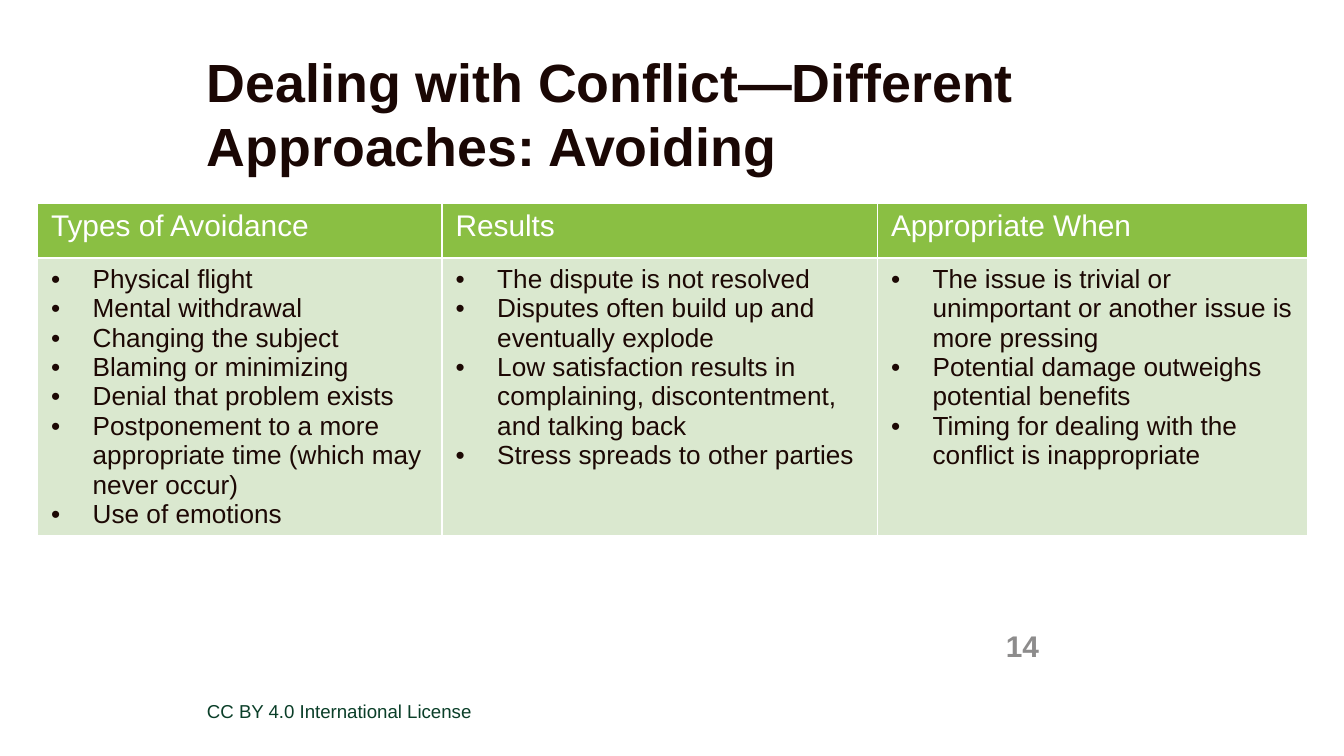
from dataclasses import dataclass

from lxml import etree
from pptx import Presentation
from pptx.dml.color import RGBColor
from pptx.enum.text import MSO_ANCHOR, MSO_AUTO_SIZE, PP_ALIGN
from pptx.oxml.ns import qn
from pptx.util import Inches, Pt

LEFT, RIGHT = PP_ALIGN.LEFT, PP_ALIGN.RIGHT
TOP, MIDDLE = MSO_ANCHOR.TOP, MSO_ANCHOR.MIDDLE
NO_AUTOFIT = MSO_AUTO_SIZE.NONE
TITLE_ONLY = 5


@dataclass(frozen=True)
class TextStyle:
    size: float
    color: str
    bold: bool = False


@dataclass(frozen=True)
class Theme:
    font: str = "Arial"
    title: TextStyle = TextStyle(28.8, "1A0704", True)
    header: TextStyle = TextStyle(16, "FFFFFF")
    body: TextStyle = TextStyle(14, "1C0804")
    footer: TextStyle = TextStyle(10, "0A3E28")
    number: TextStyle = TextStyle(16, "8D8C8C", True)
    header_fill: str = "8ABF43"
    body_fill: str = "DAE8CF"
    border: str = "FFFFFF"


@dataclass(frozen=True)
class Column:
    heading: str
    width: float
    points: tuple[str, ...]


THEME = Theme()
BULLET_INDENT = Inches(0.31)
HEADER_HEIGHT, BODY_HEIGHT = 0.41, 2.05

COLUMNS = (
    Column("Types of Avoidance", 3.01, (
        "Physical flight",
        "Mental withdrawal",
        "Changing the subject",
        "Blaming or minimizing",
        "Denial that problem exists",
        "Postponement to a more appropriate time (which may never occur)",
        "Use of emotions",
    )),
    Column("Results", 3.24, (
        "The dispute is not resolved",
        "Disputes often build up and eventually explode",
        "Low satisfaction results in complaining, discontentment, and talking back",
        "Stress spreads to other parties",
    )),
    Column("Appropriate When", 3.2, (
        "The issue is trivial or unimportant or another issue is more pressing",
        "Potential damage outweighs potential benefits",
        "Timing for dealing with the conflict is inappropriate",
    )),
)


def style_paragraph(para, style: TextStyle, align=LEFT) -> None:
    para.alignment = align
    para.font.name = THEME.font
    para.font.size = Pt(style.size)
    para.font.bold = style.bold
    para.font.color.rgb = RGBColor.from_string(style.color)


def fill_box(box, text: str, style: TextStyle, align=LEFT, anchor=TOP):
    frame = box.text_frame
    frame.word_wrap = True
    frame.auto_size = NO_AUTOFIT
    frame.vertical_anchor = anchor
    frame.margin_left = frame.margin_right = 0
    frame.margin_top = frame.margin_bottom = 0
    frame.text = text
    style_paragraph(frame.paragraphs[0], style, align)
    return frame


def add_bullet(para) -> None:
    properties = para._p.get_or_add_pPr()
    properties.set("marL", str(BULLET_INDENT))
    properties.set("indent", str(-BULLET_INDENT))
    etree.SubElement(properties, qn("a:buFont"), typeface=THEME.font)
    etree.SubElement(properties, qn("a:buChar"), char="•")


def fill_cell(cell, lines: tuple[str, ...], style: TextStyle, fill: str,
              bulleted: bool = False) -> None:
    cell.text = "\n".join(lines)
    for para in cell.text_frame.paragraphs:
        if bulleted:
            add_bullet(para)
        style_paragraph(para, style)

    # Borders come before the fill in the cell properties
    properties = cell._tc.get_or_add_tcPr()
    for side in ("lnL", "lnR", "lnT", "lnB"):
        line = etree.SubElement(properties, qn(f"a:{side}"), w=str(Pt(1)))
        solid = etree.SubElement(line, qn("a:solidFill"))
        etree.SubElement(solid, qn("a:srgbClr"), val=THEME.border)
    cell.fill.solid()
    cell.fill.fore_color.rgb = RGBColor.from_string(fill)


def add_approach_table(page, columns: tuple[Column, ...]) -> None:
    width = sum(column.width for column in columns)
    table = page.shapes.add_table(
        2, len(columns), Inches(0.28), Inches(1.51),
        Inches(width), Inches(HEADER_HEIGHT + BODY_HEIGHT)).table
    table.rows[0].height = Inches(HEADER_HEIGHT)
    table.rows[1].height = Inches(BODY_HEIGHT)
    for index, column in enumerate(columns):
        table.columns[index].width = Inches(column.width)
        fill_cell(table.cell(0, index), (column.heading,),
                  THEME.header, THEME.header_fill)
        fill_cell(table.cell(1, index), column.points,
                  THEME.body, THEME.body_fill, bulleted=True)


def main() -> None:
    deck = Presentation()
    # Widescreen page, 16 to 9
    deck.slide_width = Inches(10)
    deck.slide_height = deck.slide_width * 9 // 16
    page = deck.slides.add_slide(deck.slide_layouts[TITLE_ONLY])

    # Title
    title = page.shapes.title
    title.left, title.top = Inches(1.54), Inches(0.36)
    title.width, title.height = Inches(7.96), Inches(0.4)
    fill_box(
        title, "Dealing with Conflict—Different Approaches: Avoiding", THEME.title)

    # License line and page number
    license_box = page.shapes.add_textbox(
        Inches(1.54), Inches(5.21), Inches(5.99), Inches(0.15))
    fill_box(license_box, "CC BY 4.0 International License", THEME.footer)
    number_box = page.shapes.add_textbox(
        Inches(7.11), Inches(4.63), Inches(0.62), Inches(0.3))
    frame = fill_box(number_box, "14", THEME.number, RIGHT, MIDDLE)
    frame.margin_top = Inches(0.05)

    # Comparison table
    add_approach_table(page, COLUMNS)

    deck.save("out.pptx")


if __name__ == "__main__":
    main()
